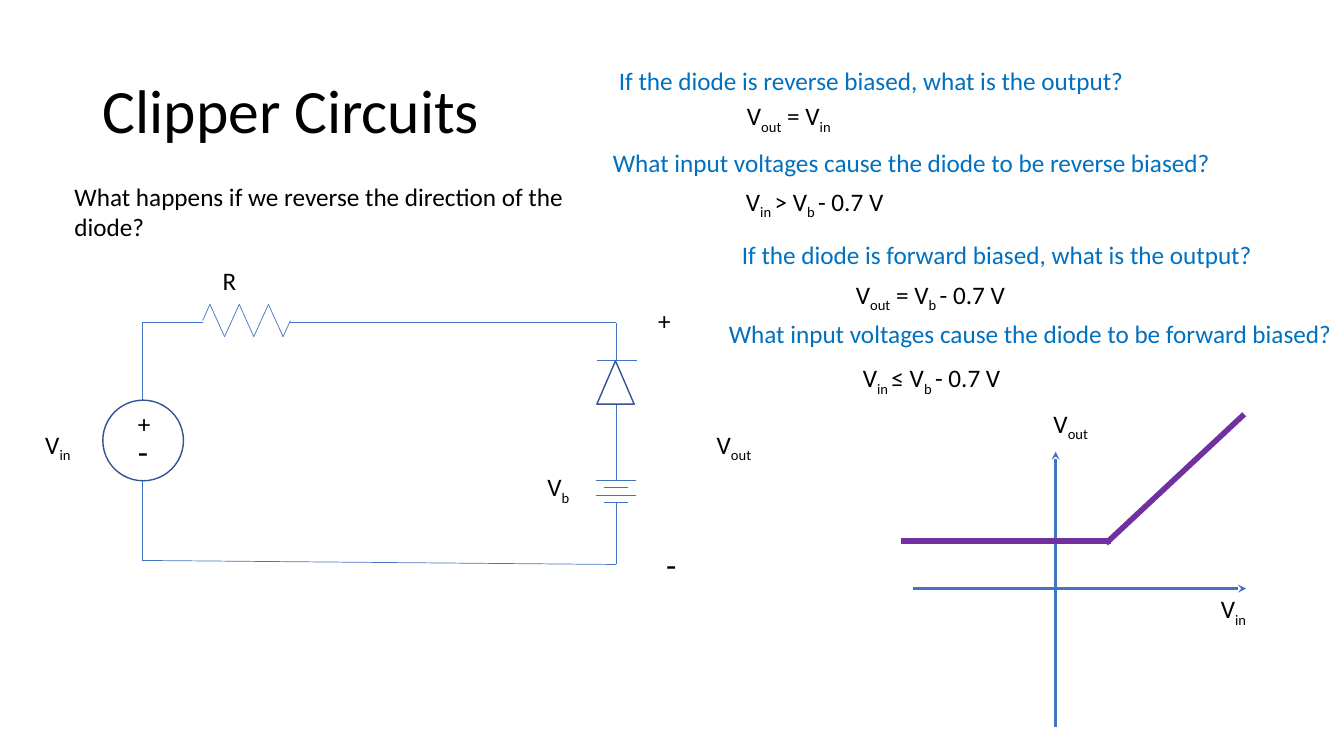
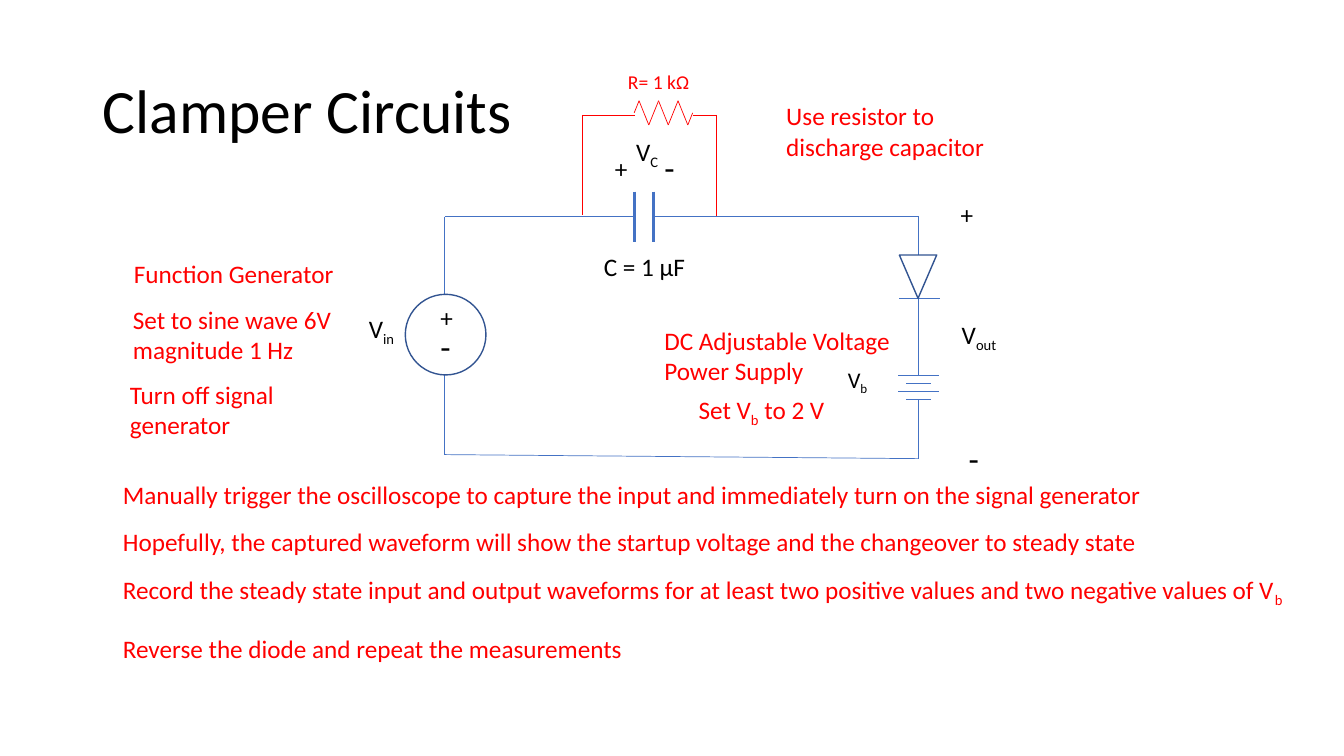
"""Build two slides on clipper and clamper diode circuits."""
from dataclasses import dataclass, field

from lxml.etree import SubElement
from pptx import Presentation
from pptx.dml.color import RGBColor
from pptx.enum.shapes import MSO_CONNECTOR, MSO_SHAPE
from pptx.enum.text import MSO_ANCHOR, MSO_AUTO_SIZE
from pptx.oxml.ns import qn
from pptx.util import Inches, Pt


@dataclass(frozen=True)
class Theme:
    font: str = "Calibri"
    ink: RGBColor = RGBColor(0x00, 0x00, 0x00)
    question: RGBColor = RGBColor(0x00, 0x70, 0xC0)
    lab: RGBColor = RGBColor(0xFF, 0x00, 0x00)
    wire: RGBColor = RGBColor(0x44, 0x72, 0xC4)
    outline: RGBColor = RGBColor(0x32, 0x54, 0x91)
    curve: RGBColor = RGBColor(0x70, 0x30, 0xA0)
    sizes: dict = field(default_factory=lambda: {
        "title": Pt(44), "minus": Pt(24), "body": Pt(18), "battery": Pt(16), "value": Pt(14)})
    spacing: dict = field(default_factory=lambda: {"title": 0.9, "battery": 1.07, "value": 1.07})


THEME = Theme()


def write(shapes, text, left, top, width, height=0.4, role="body", color=THEME.ink):
    """Add a text box; parts between tildes become subscripts."""
    frame = shapes.add_textbox(Inches(left), Inches(top), Inches(width), Inches(height)).text_frame
    frame_format = {
        "word_wrap": True,
        "auto_size": MSO_AUTO_SIZE.NONE if role == "title" else MSO_AUTO_SIZE.SHAPE_TO_FIT_TEXT,
        "vertical_anchor": MSO_ANCHOR.MIDDLE if role == "title" else MSO_ANCHOR.TOP,
    }
    for name, value in frame_format.items():
        setattr(frame, name, value)
    paragraph = frame.paragraphs[0]
    paragraph.line_spacing = THEME.spacing.get(role, 1.0)
    for index, part in enumerate(text.split("~")):
        if part:
            run = paragraph.add_run()
            run.text = part
            for name, value in {"name": THEME.font, "size": THEME.sizes[role]}.items():
                setattr(run.font, name, value)
            run.font.color.rgb = color
            if index % 2:
                run._r.get_or_add_rPr().set("baseline", "-25000")


def wire(shapes, points, color=THEME.wire, weight=0.5, arrow=False):
    """Join consecutive points with straight lines."""
    for start, end in zip(points, points[1:]):
        segment = shapes.add_connector(
            MSO_CONNECTOR.STRAIGHT, *(Inches(value) for value in (*start, *end)))
        segment.line.color.rgb = color
        segment.line.width = Pt(weight)
        if arrow:
            SubElement(segment.line._get_or_add_ln(), qn("a:tailEnd"), type="stealth")
        SubElement(segment._element.spPr, qn("a:effectLst"))


deck = Presentation()
deck.slide_width, deck.slide_height = Inches(13.33), Inches(7.5)

circuits = [
    {"title": "Clipper Circuits", "title_width": 11.5, "origin": (1.41, 3.2),
     "top_gap": (2.01, 2.88), "plate_gap": 0.07, "diode_turn": 0,
     "resistor": (2.01, 3.18, 0.87, 0.16), "resistor_color": THEME.wire,
     "labels": [("V~in~", 0.35, 4.21, 0.71), ("R", 2.11, 2.58, 0.71),
                ("V~out~", 7.01, 4.21, 0.71), ("V~b~", 5.33, 4.63, 0.71)]},
    {"title": "Clamper Circuits", "title_width": 4.48, "origin": (4.41, 2.15),
     "top_gap": (6.29, 6.48), "plate_gap": 0.08, "diode_turn": 180,
     "resistor": (6.29, 1.12, 0.58, 0.12), "resistor_color": THEME.lab,
     "labels": [("V~in~", 3.56, 3.06, 0.71), ("C = 1 μF", 5.89, 2.44, 1.23),
                ("V~out~", 9.44, 3.12, 0.71), ("V~b~", 8.31, 3.56, 0.75, 0.66, "battery"),
                ("V~C~", 6.21, 1.3, 0.48), ("+", 6, 1.47, 0.36),
                ("-", 6.49, 1.41, 0.36, 0.5, "minus")]},
]

slides = []
for circuit in circuits:
    slide = deck.slides.add_slide(deck.slide_layouts[6])
    slides.append(slide)
    write(slide.shapes, circuit["title"], 0.92, 0.4, circuit["title_width"], 1.45, "title")
    parts = slide.shapes.add_group_shape().shapes
    left, top = circuit["origin"]
    right, bottom = left + 4.7, top + 2.4
    gap_start, gap_end = circuit["top_gap"]
    diode_top, diode_bottom = top + 0.38, top + 0.81
    battery_top = top + 1.57
    battery_bottom = battery_top + 3 * circuit["plate_gap"]

    wire(parts, [(gap_start, top), (left, top), (left, top + 0.77)])
    wire(parts, [(gap_end, top), (right, top), (right, diode_top)])
    wire(parts, [(right, diode_bottom), (right, battery_top)])
    wire(parts, [(left, top + 1.57), (left, bottom - 0.04), (right, bottom), (right, battery_bottom)])
    for plate in range(4):
        reach = 0.12 if plate % 2 else 0.2
        plate_y = battery_top + plate * circuit["plate_gap"]
        wire(parts, [(right - reach, plate_y), (right + reach, plate_y)])

    bar_y = diode_bottom if circuit["diode_turn"] else diode_top
    wire(parts, [(right - 0.19, bar_y), (right + 0.21, bar_y)])
    for preset, x, y, width, height, turn in [
        (MSO_SHAPE.OVAL, left - 0.39, top + 0.77, 0.8, 0.8, 0),
        (MSO_SHAPE.ISOSCELES_TRIANGLE, right - 0.19, diode_top, 0.37, 0.43, circuit["diode_turn"]),
    ]:
        symbol = parts.add_shape(preset, Inches(x), Inches(y), Inches(width), Inches(height))
        symbol.rotation = turn
        symbol.shadow.inherit = False
        symbol.fill.background()
        symbol.line.color.rgb = THEME.outline
        symbol.line.width = Pt(1)

    start, middle, length, swing = circuit["resistor"]
    zigzag = [(start, middle)]
    for bend in range(6):
        zigzag.append((start + length * (bend + 0.5) / 6, middle + (swing if bend % 2 else -swing)))
    wire(parts, zigzag + [(start + length, middle)], circuit["resistor_color"])

    polarity = [("+", left - 0.14, top + 0.8, 0.36), ("-", left - 0.14, top + 1.03, 0.36, 0.5, "minus"),
                ("+", right + 0.32, top - 0.22, 0.36), ("-", right + 0.4, top + 2.15, 0.36, 0.5, "minus")]
    for label in polarity + circuit["labels"]:
        write(parts, *label)

clipper, clamper = slides

write(clipper.shapes, "What happens if we reverse the direction of the diode?", 0.64, 1.75, 5.27, 0.71)
for question, x, y, width in [
    ("If the diode is reverse biased, what is the output?", 6.04, 0.6, 5.76),
    ("What input voltages cause the diode to be reverse biased?", 5.98, 1.41, 6.8),
    ("If the diode is forward biased, what is the output?", 7.26, 2.33, 5.76),
    ("What input voltages cause the diode to be forward biased?", 7.13, 3.11, 6.23),
]:
    write(clipper.shapes, question, x, y, width, color=THEME.question)
for answer, x, y in [
    ("V~out~ = V~in~", 7.31, 0.95),
    ("V~in ~> V~b ~- 0.7 V", 7.3, 1.8),
    ("V~out~ = V~b ~- 0.7 V", 8.39, 2.72),
    ("V~in ~≤ V~b ~- 0.7 V", 8.46, 3.55),
]:
    write(clipper.shapes, answer, x, y, 2.1)

transfer = clipper.shapes.add_group_shape().shapes
for axis in [[(9.06, 5.84), (12.36, 5.84)], [(10.47, 7.21), (10.47, 4.48)]]:
    wire(transfer, axis, weight=1.75, arrow=True)
for stretch in [[(8.94, 5.37), (11.02, 5.37)], [(10.97, 5.39), (12.34, 4.11)]]:
    wire(transfer, stretch, THEME.curve, 4)
write(transfer, "V~out~", 10.35, 4, 0.71)
write(transfer, "V~in~", 12.01, 5.84, 0.71)

for capacitor_plate in (6.29, 6.48):
    wire(clamper.shapes, [(capacitor_plate, 1.9), (capacitor_plate, 2.4)], weight=2)
for branch in [[(6.3, 1.14), (5.78, 1.14), (5.78, 2.13)], [(6.87, 1.14), (7.11, 1.14), (7.11, 2.14)]]:
    wire(clamper.shapes, branch, THEME.lab)
for instruction in [
    ("R= 1 kΩ", 6.13, 0.63, 0.93, 0.34, "value"),
    ("Use resistor to discharge capacitor", 7.7, 0.95, 2.17, 0.71),
    ("Function Generator", 1.23, 2.51, 2.45),
    ("Set to sine wave 6V magnitude 1 Hz", 1.22, 2.97, 2.17, 0.71),
    ("Turn off signal generator", 1.19, 3.71, 2.17, 0.71),
    ("DC Adjustable Voltage Power Supply", 6.49, 3.18, 2.45, 0.71),
    ("Set V~b~ to 2 V", 6.83, 3.86, 1.85),
    ("Manually trigger the oscilloscope to capture the input and immediately turn on the signal generator",
     1.12, 4.71, 10.58),
    ("Hopefully, the captured waveform will show the startup voltage and the changeover to steady state",
     1.12, 5.17, 10.58),
    ("Record the steady state input and output waveforms for at least two positive values "
     "and two negative values of V~b~", 1.12, 5.65, 11.74),
    ("Reverse the diode and repeat the measurements", 1.12, 6.23, 10.58),
]:
    write(clamper.shapes, *instruction, color=THEME.lab)

deck.save("out.pptx")
